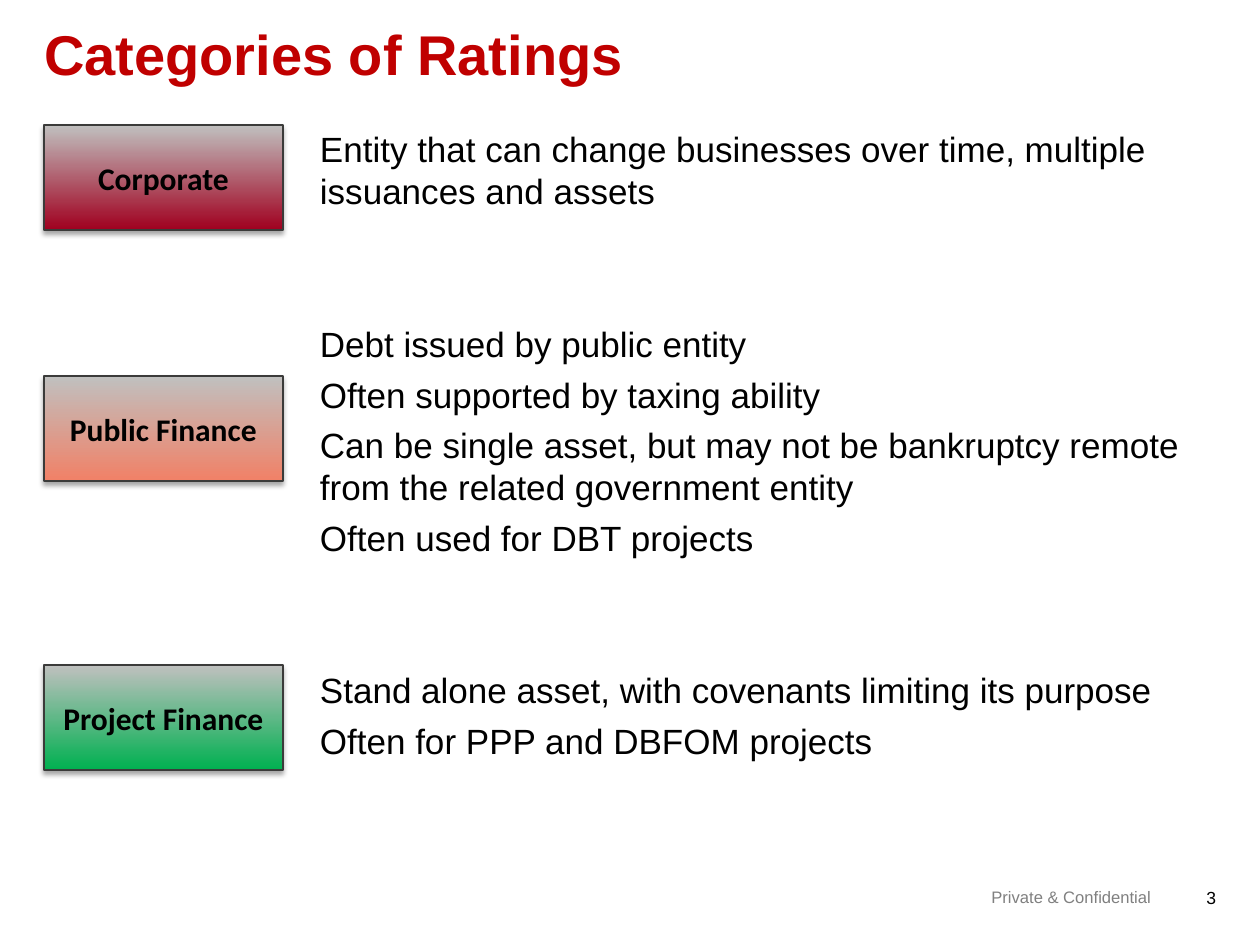
from lxml import etree
from pptx import Presentation
from pptx.dml.color import RGBColor
from pptx.enum.shapes import MSO_SHAPE
from pptx.enum.text import MSO_ANCHOR, MSO_AUTO_SIZE, PP_ALIGN
from pptx.oxml.ns import qn
from pptx.util import Emu, Pt

BLACK = RGBColor(0x00, 0x00, 0x00)
RED = RGBColor(0xC0, 0x00, 0x00)
GRAY = RGBColor(0x80, 0x80, 0x80)
SILVER = RGBColor(0xC0, 0xC0, 0xBF)
BORDER = RGBColor(0x3B, 0x3B, 0x3A)
CRIMSON = RGBColor(0xA0, 0x00, 0x1F)
CORAL = RGBColor(0xF1, 0x81, 0x67)
GREEN = RGBColor(0x00, 0xB0, 0x50)

CATEGORIES = [
    ("Corporate", 125, CRIMSON, [
        "Entity that can change businesses over time, multiple issuances and assets"]),
    ("Public Finance", 376, CORAL, [
        "Debt issued by public entity",
        "Often supported by taxing ability",
        "Can be single asset, but may not be bankruptcy remote from the related government entity",
        "Often used for DBT projects"]),
    ("Project Finance", 665, GREEN, [
        "Stand alone asset, with covenants limiting its purpose",
        "Often for PPP and DBFOM projects"]),
]


def px(n):
    return Emu(round(n * 914400 / 126))


class Deck:
    """Holds the text style and the current slide, and adds elements to it."""

    def __init__(self):
        self.prs = Presentation()
        self.prs.slide_width, self.prs.slide_height = px(1260), px(945)
        self.s = self.prs.slides.add_slide(self.prs.slide_layouts[5])
        self.style = {"name": "Arial", "size": Pt(20), "bold": False}

    def place(self, sp, box):
        for key, n in zip(("left", "top", "width", "height"), box):
            setattr(sp, key, px(n))

    def frame(self, sp, anchor=MSO_ANCHOR.TOP):
        tf = sp.text_frame
        values = {"word_wrap": True, "auto_size": MSO_AUTO_SIZE.NONE, "vertical_anchor": anchor,
                  "margin_left": 0, "margin_right": 0, "margin_top": 0, "margin_bottom": 0}
        for key, value in values.items():
            setattr(tf, key, value)
        return tf

    def fill_text(self, p, text, color=BLACK, align=PP_ALIGN.LEFT, **font):
        p.alignment = align
        r = p.add_run()
        r.text = text
        for key, value in {**self.style, **font}.items():
            setattr(r.font, key, value)
        r.font.color.rgb = color

    def title(self, text, box):
        sp = self.s.shapes.title
        self.place(sp, box)
        p = self.frame(sp).paragraphs[0]
        p.line_spacing = 0.85
        self.fill_text(p, text, RED, size=Pt(32), bold=True)

    def text(self, text, box, **style):
        sp = self.s.shapes.add_textbox(*map(px, box))
        self.fill_text(self.frame(sp).paragraphs[0], text, **style)

    def groups(self, groups, box):
        tf = self.frame(self.s.shapes.add_textbox(*map(px, box)))
        for i, lines in enumerate(groups):
            for j, line in enumerate(lines):
                first = i == j == 0
                p = tf.paragraphs[0] if first else tf.add_paragraph()
                p.line_spacing = Pt(24)
                p.space_before = Pt(0 if first else 5 if j else 63)
                self.fill_text(p, line)

    def label(self, text, box, color):
        sp = self.s.shapes.add_shape(MSO_SHAPE.RECTANGLE, *map(px, box))
        sp.fill.gradient()
        sp.fill.gradient_angle = 90
        for stop, rgb, position in zip(sp.fill.gradient_stops, (color, SILVER), (0, 1)):
            stop.color.rgb = rgb
            stop.position = position
        sp.line.color.rgb = BORDER
        sp.line.width = Pt(0.75)
        self.shadow(sp)
        p = self.frame(sp, MSO_ANCHOR.MIDDLE).paragraphs[0]
        self.fill_text(p, text, align=PP_ALIGN.CENTER, name="Calibri", size=Pt(18), bold=True)

    def shadow(self, sp):
        sp.shadow.inherit = False
        effects = sp._element.spPr.find(qn("a:effectLst"))
        outer = etree.SubElement(effects, qn("a:outerShdw"), blurRad=str(Pt(3.1)),
                                 dist=str(Pt(1.8)), dir="5400000", rotWithShape="0")
        rgb = etree.SubElement(outer, qn("a:srgbClr"), val=str(BLACK))
        etree.SubElement(rgb, qn("a:alpha"), val="35000")


def main():
    deck = Deck()
    deck.title("Categories of Ratings", (44, 30, 1119, 110))
    deck.text("Private & Confidential", (748, 887, 403, 30),
              color=GRAY, align=PP_ALIGN.RIGHT, size=Pt(9.5))
    deck.text("3", (1187, 887, 29, 35), align=PP_ALIGN.RIGHT, size=Pt(10))
    deck.groups([lines for *_, lines in CATEGORIES], (320, 128, 896, 640))
    for name, top, color, _ in CATEGORIES:
        deck.label(name, (44, top, 239, 105), color)
    deck.prs.save("out.pptx")


if __name__ == "__main__":
    main()
